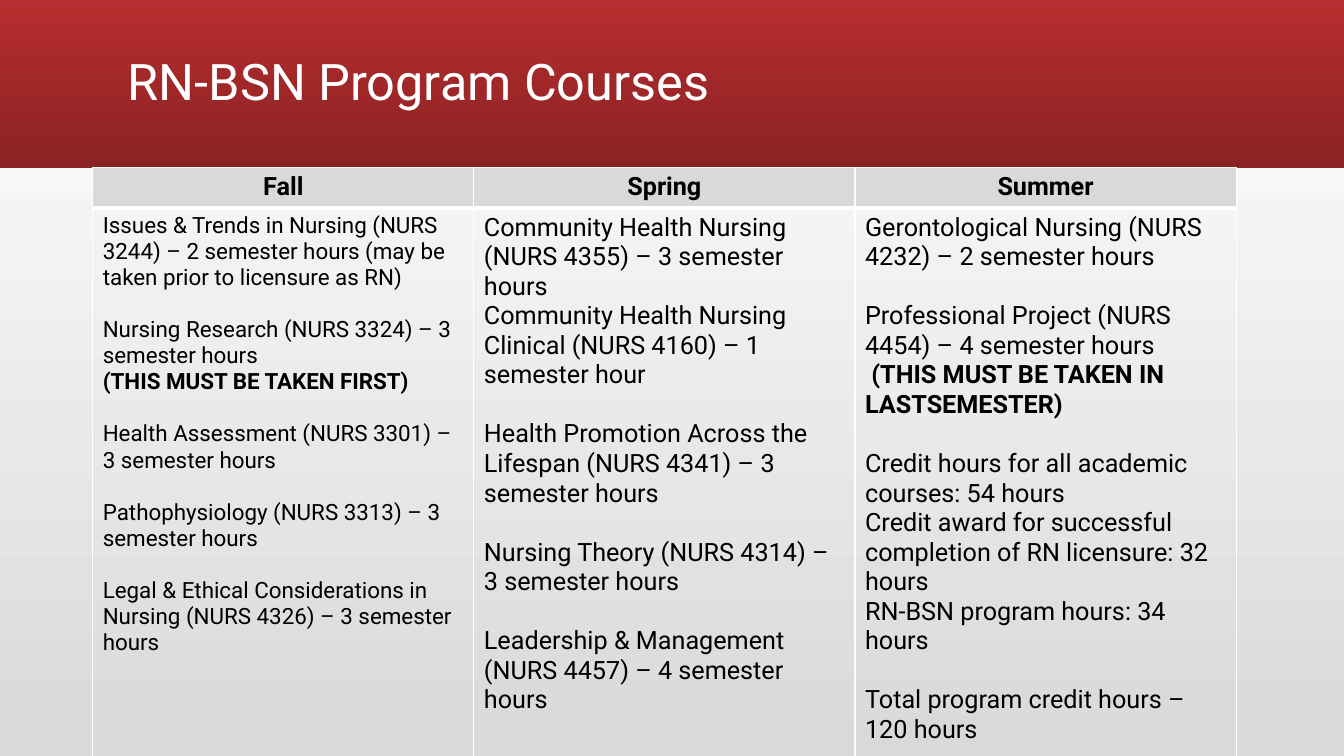
from lxml import etree
from pptx import Presentation
from pptx.dml.color import RGBColor
from pptx.enum.shapes import MSO_SHAPE
from pptx.enum.text import MSO_ANCHOR, PP_ALIGN
from pptx.oxml.ns import qn
from pptx.util import Inches, Pt

TITLE = "RN-BSN Program Courses"
# Each term: name, text size, groups of paragraphs (a gap parts the groups)
TERMS = [
    ("Fall", 16, [
        ["Issues & Trends in Nursing (NURS 3244) – 2 semester hours (may be taken prior to licensure as RN)"],
        ["Nursing Research (NURS 3324) – 3 semester hours",
         "(THIS MUST BE TAKEN FIRST)"],
        ["Health Assessment (NURS 3301) – 3 semester hours"],
        ["Pathophysiology (NURS 3313) – 3 semester hours"],
        ["Legal & Ethical Considerations in Nursing (NURS 4326) – 3 semester hours"],
    ]),
    ("Spring", 18, [
        ["Community Health Nursing (NURS 4355) – 3 semester hours",
         "Community Health Nursing Clinical (NURS 4160) – 1 semester hour"],
        ["Health Promotion Across the Lifespan (NURS 4341) – 3 semester hours"],
        ["Nursing Theory (NURS 4314) – 3 semester hours"],
        ["Leadership & Management (NURS 4457) – 4 semester hours"],
    ]),
    ("Summer", 18, [
        ["Gerontological Nursing (NURS 4232) – 2 semester hours"],
        ["Professional Project (NURS 4454) – 4 semester hours",
         " (THIS MUST BE TAKEN IN LASTSEMESTER)"],
        ["Credit hours for all academic courses: 54 hours",
         "Credit award for successful completion of RN licensure: 32 hours",
         "RN-BSN program hours: 34 hours"],
        ["Total program credit hours – 120 hours"],
    ]),
]
COLORS = {"white": "FFFFFF", "black": "000000", "gray": "D9D9D9",
          "red": "B82D2F", "dark": "8A2223"}
FONT = "Roboto"
LINE = 1.17  # line height of the font, in ems
WIDE, HIGH = 13.33, 7.5
COL, HEAD, BODY = 3.78, 0.39, 5.51


def rgb(name):
    return RGBColor.from_string(COLORS[name])


def shade(fill, names, angle):
    fill.gradient()
    fill.gradient_angle = angle
    for stop, name in zip(fill.gradient_stops, names):
        stop.color.rgb = rgb(name)


def style(para, size, color="black", bold=False):
    font = para.font
    font.name, font.size, font.bold = FONT, Pt(size), bold
    font.color.rgb = rgb(color)


def border(cell, top, bottom):
    props = cell._tc.get_or_add_tcPr()
    sides = {"a:lnL": 1, "a:lnR": 1, "a:lnT": top, "a:lnB": bottom}
    for place, (tag, width) in enumerate(sides.items()):
        line = etree.Element(qn(tag), w=str(Pt(width)))
        fill = etree.SubElement(line, qn("a:solidFill"))
        etree.SubElement(fill, qn("a:srgbClr"), val=COLORS["white"])
        props.insert(place, line)


deck = Presentation()
deck.slide_width, deck.slide_height = Inches(WIDE), Inches(HIGH)
slide = deck.slides.add_slide(deck.slide_layouts[6])
shade(slide.background.fill, ("gray", "white"), 90)

# Banner
banner = slide.shapes.add_shape(MSO_SHAPE.RECTANGLE, 0, 0, Inches(WIDE), Inches(1.67))
banner.shadow.inherit = False
banner.line.fill.background()
shade(banner.fill, ("red", "dark"), 270)

# Title
box = slide.shapes.add_textbox(Inches(1.17), Inches(0.11), Inches(11), Inches(1.45))
frame = box.text_frame
frame.word_wrap = True
frame.vertical_anchor = MSO_ANCHOR.MIDDLE
frame.text = TITLE
frame.paragraphs[0].line_spacing = 0.9
style(frame.paragraphs[0], 36, "white")

# Course table
table = slide.shapes.add_table(2, len(TERMS), Inches(0.92), Inches(1.66),
                               Inches(COL * len(TERMS)), Inches(HEAD + BODY)).table
table.horz_banding = False
table.rows[0].height, table.rows[1].height = Inches(HEAD), Inches(BODY)

for col, (term, size, groups) in enumerate(TERMS):
    table.columns[col].width = Inches(COL)
    head, body = table.cell(0, col), table.cell(1, col)

    head.text = term
    head.fill.solid()
    head.fill.fore_color.rgb = rgb("gray")
    border(head, 1, 3)
    para = head.text_frame.paragraphs[0]
    para.alignment = PP_ALIGN.CENTER
    style(para, 18, bold=True)

    body.fill.background()
    border(body, 3, 1)
    body.text = "\n".join(text for group in groups for text in group)
    paras = iter(body.text_frame.paragraphs)
    for index, group in enumerate(groups):
        for place, text in enumerate(group):
            para = next(paras)
            style(para, size, bold="THIS MUST" in text)
            if index and not place:
                para.space_before = Pt(round(size * LINE, 1))

deck.save("out.pptx")
